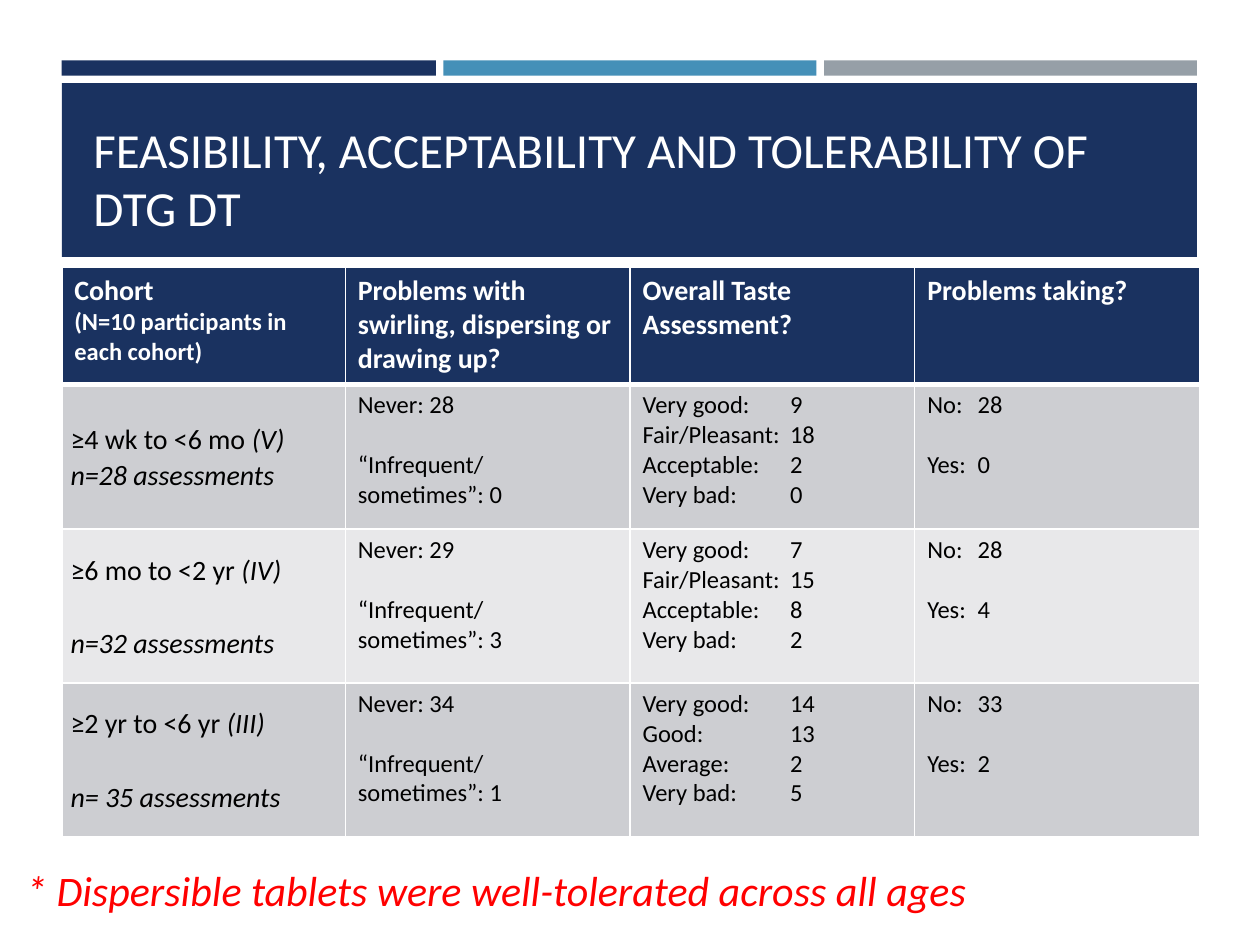
"""Build the slide on feasibility, acceptability and tolerability of DTG DT."""
from dataclasses import dataclass
from typing import Optional

from lxml.etree import SubElement
from pptx import Presentation
from pptx.dml.color import RGBColor
from pptx.enum.shapes import MSO_SHAPE as Shape
from pptx.enum.text import MSO_ANCHOR as Anchor, MSO_AUTO_SIZE as AutoSize, PP_ALIGN as Align
from pptx.oxml.ns import qn
from pptx.util import Emu, Pt

SCALE = 9144
FONT = "Calibri"
COLORS = {"navy": "1A3260", "blue": "4590B8", "gray": "969FA7", "white": "FFFFFF",
          "black": "000000", "red": "FF0000", "dark_band": "CDCED2", "light_band": "E8E8EA"}


@dataclass(frozen=True)
class Span:
    text: str
    size: int = 14
    color: str = "black"
    bold: bool = False
    italic: bool = False


@dataclass(frozen=True)
class Line:
    spans: tuple[Span, ...]
    before: int = 0
    spacing: Optional[float] = None
    tab: int = 0


@dataclass(frozen=True)
class Bar:
    left: int
    top: int
    width: int
    height: int
    color: str


@dataclass(frozen=True)
class Cohort:
    age: str
    version: str
    assessments: str
    gap: int
    never: int
    sometimes: int
    tastes: tuple[tuple[str, int], ...]
    no: int
    yes: int


BARS = (Bar(49, 48, 297, 12, "navy"), Bar(352, 48, 296, 12, "blue"),
        Bar(654, 48, 296, 12, "gray"), Bar(49, 66, 901, 138, "navy"))
HEADERS = (("Cohort", "(N=10 participants in each cohort)"),
           ("Problems with swirling, dispersing or drawing up?",),
           ("Overall Taste Assessment?",), ("Problems taking?",))
COHORTS = (
    Cohort("≥4 wk to <6 mo ", "(V)", "n=28 assessments", 0, 28, 0,
           (("Very good:", 9), ("Fair/Pleasant:", 18), ("Acceptable:", 2), ("Very bad:", 0)), 28, 0),
    Cohort("≥6 mo to <2 yr ", "(IV)", "n=32 assessments", 21, 29, 3,
           (("Very good:", 7), ("Fair/Pleasant:", 15), ("Acceptable:", 8), ("Very bad:", 2)), 28, 4),
    Cohort("≥2 yr to <6 yr ", "(III)", "n= 35 assessments", 21, 34, 1,
           (("Very good:", 14), ("Good:", 13), ("Average:", 2), ("Very bad:", 5)), 33, 2),
)
COLUMN_WIDTHS = (225, 226, 226, 226)
ROW_HEIGHTS = (93, 115, 122, 122)


def px(length: int) -> Emu:
    return Emu(length * SCALE)


def rgb(name: str) -> RGBColor:
    return RGBColor.from_string(COLORS[name])


def write(frame, lines: list[Line]) -> None:
    for index, line in enumerate(lines):
        para = frame.paragraphs[0] if index == 0 else frame.add_paragraph()
        para.alignment = Align.LEFT
        if line.spacing:
            para.line_spacing = line.spacing
        para.space_before = Pt(line.before)
        if line.tab:
            tabs = SubElement(para._p.get_or_add_pPr(), qn("a:tabLst"))
            SubElement(tabs, qn("a:tab"), pos=str(px(line.tab)), algn="l")
        for span in line.spans:
            run = para.add_run()
            run.text = span.text
            font = run.font
            font.name, font.size = FONT, Pt(span.size)
            font.bold, font.italic = span.bold, span.italic
            font.color.rgb = rgb(span.color)


def draw_bar(page, bar: Bar) -> None:
    shape = page.shapes.add_shape(Shape.RECTANGLE, px(bar.left), px(bar.top),
                                  px(bar.width), px(bar.height))
    shape.shadow.inherit = False
    shape.fill.solid()
    shape.fill.fore_color.rgb = rgb(bar.color)
    shape.line.fill.background()


def style_cell(cell, fill: str, top: int, bottom: int) -> None:
    properties = cell._tc.get_or_add_tcPr()
    for side, width in (("L", 1), ("R", 1), ("T", top), ("B", bottom)):
        border = SubElement(properties, qn(f"a:ln{side}"), w=str(Pt(width)))
        SubElement(SubElement(border, qn("a:solidFill")), qn("a:srgbClr"), val=COLORS["white"])
    cell.fill.solid()
    cell.fill.fore_color.rgb = rgb(fill)


def header_lines(texts: tuple[str, ...]) -> list[Line]:
    return [Line((Span(text, 14 if index else 16, "white", bold=True),))
            for index, text in enumerate(texts)]


def cohort_cells(cohort: Cohort) -> list[list[Line]]:
    return [
        [Line((Span(cohort.age, 16), Span(cohort.version, 16, italic=True)), spacing=1.07),
         Line((Span(cohort.assessments, 16, italic=True),), cohort.gap, 1.07)],
        [Line((Span(f"Never: {cohort.never}"),)),
         Line((Span("“Infrequent/"),), 17),
         Line((Span(f"sometimes”: {cohort.sometimes}"),))],
        [Line((Span(f"{label}\t{count}"),), tab=117) for label, count in cohort.tastes],
        [Line((Span(f"No:\t{cohort.no}"),), tab=40),
         Line((Span(f"Yes:\t{cohort.yes}"),), 17, tab=40)],
    ]


def draw_table(page) -> None:
    frame = page.shapes.add_table(len(ROW_HEIGHTS), len(COLUMN_WIDTHS), px(49), px(212),
                                  px(sum(COLUMN_WIDTHS)), px(sum(ROW_HEIGHTS)))
    table = frame.table
    for column, width in zip(table.columns, COLUMN_WIDTHS):
        column.width = px(width)
    for row, height in zip(table.rows, ROW_HEIGHTS):
        row.height = px(height)
    rows = [[header_lines(texts) for texts in HEADERS], *map(cohort_cells, COHORTS)]
    for row, contents in enumerate(rows):
        fill = "navy" if row == 0 else "dark_band" if row % 2 else "light_band"
        for column, lines in enumerate(contents):
            cell = table.cell(row, column)
            style_cell(cell, fill, 3 if row == 1 else 1, 3 if row == 0 else 1)
            write(cell.text_frame, lines)
            if row and column == 0:
                cell.vertical_anchor = Anchor.MIDDLE
                cell.margin_left = cell.margin_right = px(7)
                cell.margin_top = cell.margin_bottom = 0


def draw_title(page) -> None:
    title = page.shapes.title
    title.left, title.top, title.width, title.height = px(64), px(75), px(874), px(118)
    frame = title.text_frame
    frame.word_wrap, frame.auto_size = True, AutoSize.NONE
    frame.vertical_anchor = Anchor.BOTTOM
    write(frame, [Line((Span("FEASIBILITY, ACCEPTABILITY AND TOLERABILITY OF DTG DT",
                             28, "white"),))])


def draw_conclusion(page) -> None:
    box = page.shapes.add_textbox(px(11), px(681), px(960), px(50))
    box.text_frame.word_wrap = True
    write(box.text_frame, [Line((Span("* Dispersible tablets were well-tolerated across all ages",
                                      24, "red", italic=True),))])


def main() -> None:
    deck = Presentation()
    deck.slide_width, deck.slide_height = px(1000), px(750)
    page = deck.slides.add_slide(deck.slide_layouts[5])
    for bar in BARS:
        draw_bar(page, bar)
    tree = page.shapes._spTree
    tree.append(page.shapes.title._element)
    draw_title(page)
    draw_table(page)
    draw_conclusion(page)
    deck.save("out.pptx")


if __name__ == "__main__":
    main()
